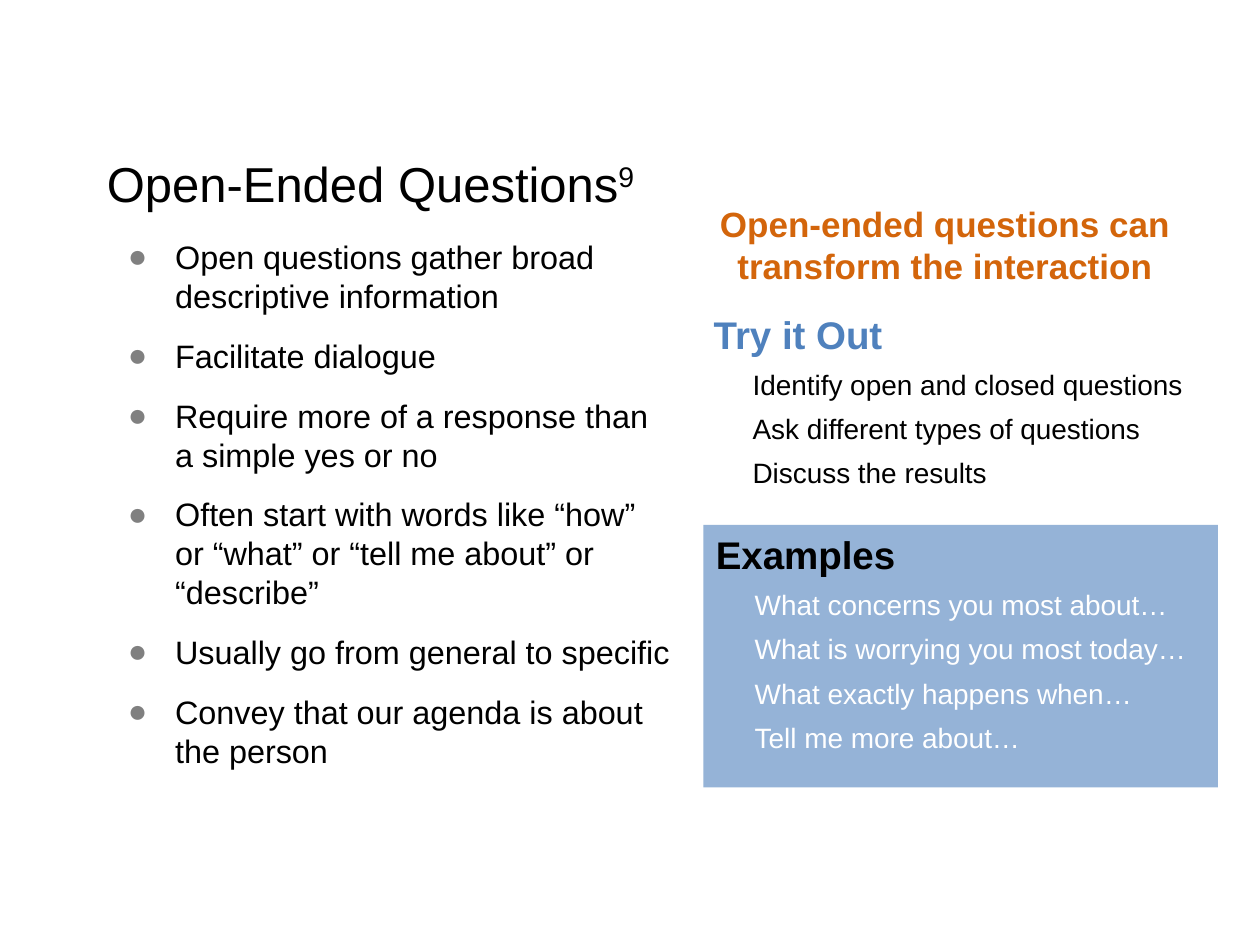
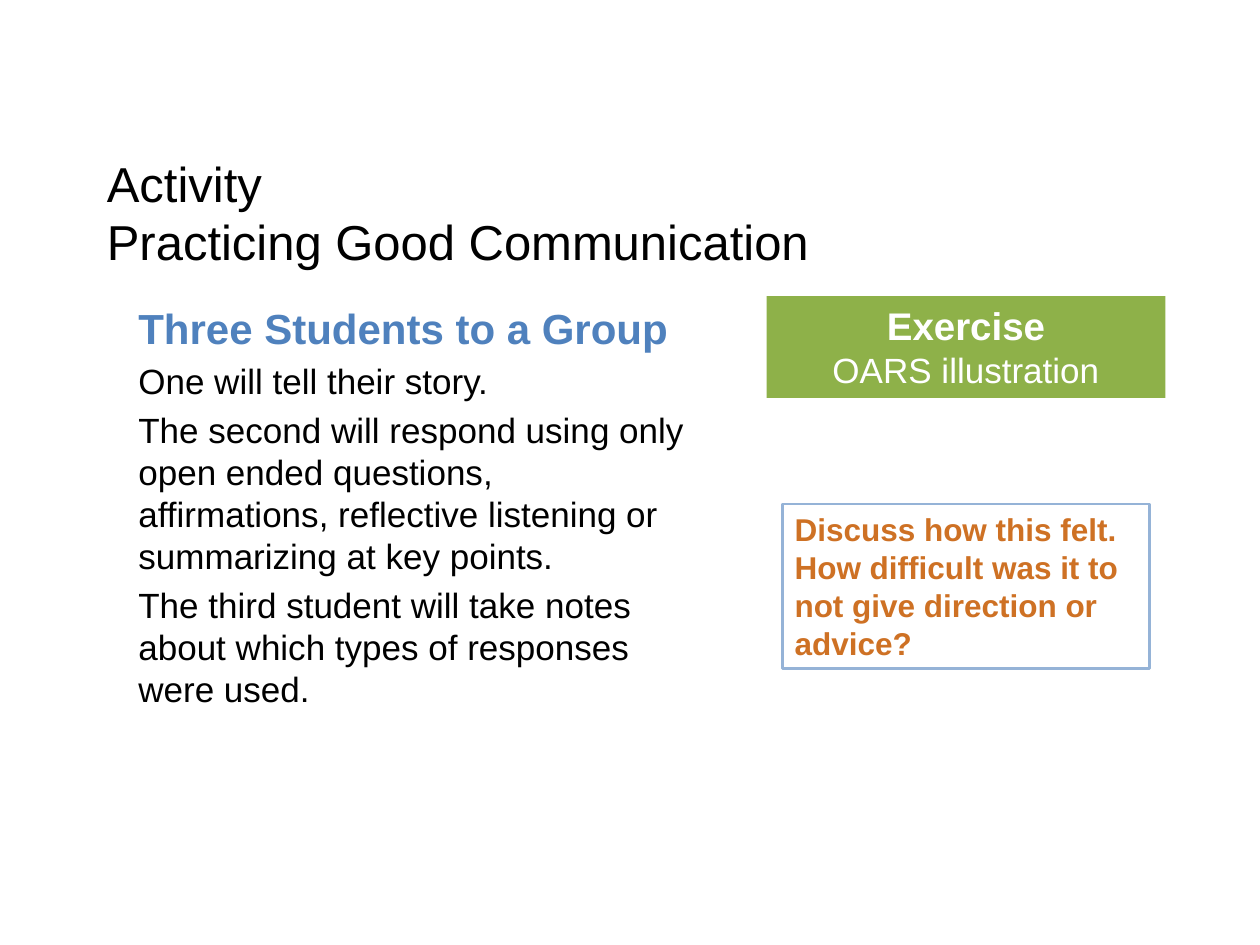
from dataclasses import dataclass
from typing import Optional

from lxml.etree import SubElement
from pptx import Presentation
from pptx.dml.color import RGBColor as Rgb
from pptx.enum.shapes import MSO_SHAPE as Preset
from pptx.enum.text import MSO_ANCHOR as Anchor, PP_ALIGN as Align
from pptx.oxml.ns import qn
from pptx.util import Pt

PX = 7620  # 120 px to the inch
SLIDE_WIDTH, SLIDE_HEIGHT = 1200, 900
FONT = "Arial"
COLORS = {
    "text": "000000",
    "white": "FFFFFF",
    "heading": "4F81BD",
    "panel": "95B3D7",
    "exercise": "8EB149",
    "callout": "D3650B",
    "discussion": "CE7124",
    "bullet": "808080",
}
FRAME_FORMAT = {
    "word_wrap": True,
    "vertical_anchor": Anchor.TOP,
    "margin_left": 12 * PX,
    "margin_right": 12 * PX,
    "margin_top": 6 * PX,
    "margin_bottom": 6 * PX,
}


@dataclass(frozen=True)
class Line:
    text: str
    size: float
    color: str = "text"
    bold: bool = False
    superscript: str = ""
    indent: int = 0
    bullet: str = ""


@dataclass(frozen=True)
class Block:
    left: int
    top: int
    width: int
    height: int
    lines: list[Line]
    gap: float = 0
    align: Align = Align.LEFT
    fill: Optional[str] = None
    outline: Optional[str] = None


def rgb(name: str) -> Rgb:
    return Rgb.from_string(COLORS[name])


def apply(target, values: dict) -> None:
    for name, value in values.items():
        setattr(target, name, value)


def add_run(paragraph, text: str, line: Line):
    run = paragraph.add_run()
    run.text = text
    apply(run.font, {"name": FONT, "size": Pt(line.size), "bold": line.bold})
    run.font.color.rgb = rgb(line.color)
    return run


def set_indent(paragraph, line: Line) -> None:
    """Indent the whole paragraph and hang its bullet, if it has one."""
    properties = paragraph._p.get_or_add_pPr()
    properties.set("marL", str(line.indent * PX))
    properties.set("indent", str(-line.indent * PX if line.bullet else 0))
    if line.bullet:
        color = SubElement(properties, qn("a:buClr"))
        SubElement(color, qn("a:srgbClr"), val=COLORS["bullet"])
        SubElement(properties, qn("a:buFont"), typeface=FONT)
        SubElement(properties, qn("a:buChar"), char=line.bullet)


def write_line(paragraph, line: Line) -> None:
    set_indent(paragraph, line)
    for number, part in enumerate(line.text.split("\n")):
        if number:
            paragraph.add_line_break()
        add_run(paragraph, part, line)
    if line.superscript:
        raised = add_run(paragraph, line.superscript, line)
        raised._r.get_or_add_rPr().set("baseline", "30000")


def draw_block(slide, block: Block) -> None:
    bounds = [side * PX for side in (block.left, block.top, block.width, block.height)]
    if block.fill or block.outline:
        shape = slide.shapes.add_shape(Preset.RECTANGLE, *bounds)
        shape.shadow.inherit = False
        if block.fill:
            shape.fill.solid()
            shape.fill.fore_color.rgb = rgb(block.fill)
        else:
            shape.fill.background()
        if block.outline:
            shape.line.color.rgb = rgb(block.outline)
            shape.line.width = Pt(1.5)
        else:
            shape.line.fill.background()
    else:
        shape = slide.shapes.add_textbox(*bounds)

    frame = shape.text_frame
    apply(frame, FRAME_FORMAT)
    for number, line in enumerate(block.lines):
        paragraph = frame.add_paragraph() if number else frame.paragraphs[0]
        write_line(paragraph, line)
        apply(paragraph, {"alignment": block.align,
                          "space_before": Pt(block.gap if number else 0)})


def title(text: str, superscript: str = "") -> Block:
    return Block(90, 140, 1050, 110, [Line(text, 28, superscript=superscript)])


def prompt_lines(heading: str, heading_color: str, prompts: list[str], color: str) -> list[Line]:
    return [Line(heading, 22, heading_color, bold=True),
            *(Line(prompt, 16, color, indent=37) for prompt in prompts)]


QUESTION_TRAITS = [
    "Open questions gather broad descriptive information",
    "Facilitate dialogue",
    "Require more of a response than a simple yes or no",
    "Often start with words like “how” or “what” or “tell me about” or “describe”",
    "Usually go from general to specific",
    "Convey that our agenda is about the person",
]
TASKS = [
    "Identify open and closed questions",
    "Ask different types of questions",
    "Discuss the results",
]
EXAMPLES = [
    "What concerns you most about…",
    "What is worrying you most today…",
    "What exactly happens when…",
    "Tell me more about…",
]
STUDENT_ROLES = [
    "One will tell their story.",
    "The second will respond using only open ended questions, affirmations, "
    "reflective listening or summarizing at key points.",
    "The third student will take notes about which types of responses were used.",
]

OPEN_QUESTIONS = [
    title("Open-Ended Questions", superscript="9"),
    Block(110, 220, 542, 540,
          [Line(trait, 18.5, indent=45, bullet="●") for trait in QUESTION_TRAITS], gap=12),
    Block(660, 187, 480, 92,
          [Line("Open-ended questions can transform the interaction", 20, "callout", bold=True)],
          align=Align.CENTER),
    Block(668, 290, 490, 208,
          prompt_lines("Try it Out", "heading", TASKS, "text"), gap=6, fill="white"),
    Block(670, 500, 490, 250,
          prompt_lines("Examples", "text", EXAMPLES, "white"), gap=6, fill="panel"),
]
ACTIVITY = [
    title("Activity\nPracticing Good Communication"),
    Block(120, 282, 550, 419,
          [Line("Three Students to a Group", 24, "heading", bold=True),
           *(Line(role, 20) for role in STUDENT_ROLES)], gap=4, fill="white"),
    Block(730, 282, 380, 97,
          [Line("Exercise", 22, "white", bold=True), Line("OARS illustration", 20, "white")],
          align=Align.CENTER, fill="exercise"),
    Block(745, 480, 350, 157,
          [Line("Discuss how this felt. How difficult was it to not give direction or advice?",
                18, "discussion", bold=True)], outline="panel"),
]


def main() -> None:
    deck = Presentation()
    apply(deck, {"slide_width": SLIDE_WIDTH * PX, "slide_height": SLIDE_HEIGHT * PX})
    blank = deck.slide_layouts[6]
    for blocks in (OPEN_QUESTIONS, ACTIVITY):
        slide = deck.slides.add_slide(blank)
        for block in blocks:
            draw_block(slide, block)
    deck.save("out.pptx")


if __name__ == "__main__":
    main()
